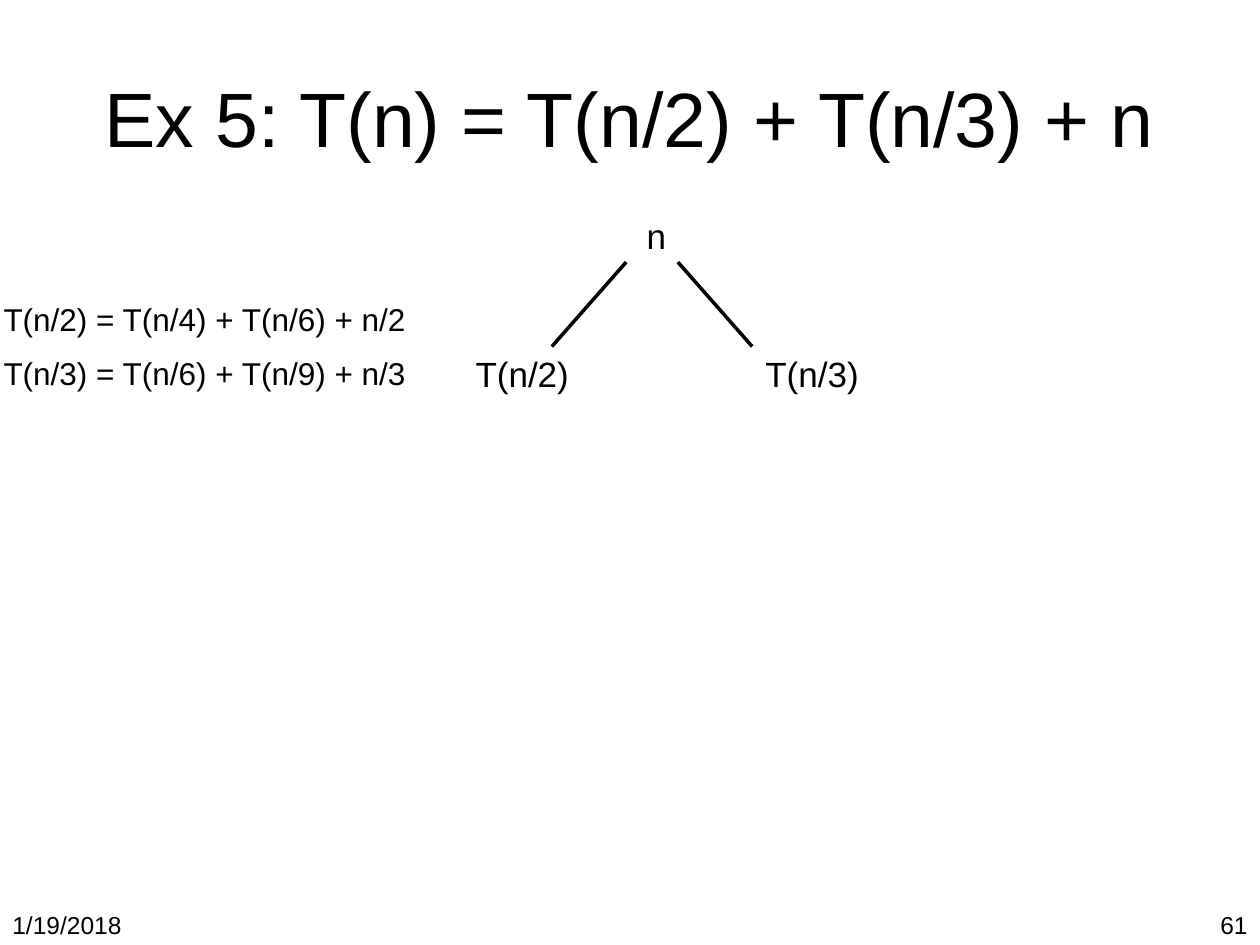
from dataclasses import dataclass

from lxml import etree
from pptx import Presentation
from pptx.dml.color import RGBColor
from pptx.enum.shapes import MSO_CONNECTOR
from pptx.enum.text import MSO_ANCHOR, MSO_AUTO_SIZE, PP_ALIGN
from pptx.oxml.ns import qn
from pptx.slide import Slide
from pptx.text.text import TextFrame
from pptx.util import Inches, Pt

LEFT, CENTER, RIGHT = PP_ALIGN.LEFT, PP_ALIGN.CENTER, PP_ALIGN.RIGHT
MIDDLE = MSO_ANCHOR.MIDDLE
FIT_SHAPE = MSO_AUTO_SIZE.SHAPE_TO_FIT_TEXT
STRAIGHT = MSO_CONNECTOR.STRAIGHT

BLACK = RGBColor(0, 0, 0)
WHITE = RGBColor(255, 255, 255)
FONT = "Arial"


@dataclass
class Label:
    text: str
    left: float
    top: float
    width: float
    height: float
    size: int
    align: PP_ALIGN = CENTER
    wrap: bool = False


@dataclass
class Branch:
    start_x: float
    end_x: float
    start_y: float = 2.08
    end_y: float = 2.75


FOOTERS = [
    Label("1/19/2018", 0, 7.17, 2.33, 0.33, 14, LEFT, True),
    Label("61", 7.67, 7.17, 2.33, 0.33, 14, RIGHT, True),
]
TREE_NODES = [
    Label("n", 5.03, 1.65, 0.36, 0.44, 20),
    Label("T(n/2)", 3.67, 2.75, 0.95, 0.44, 20),
    Label("T(n/3)", 5.97, 2.75, 0.95, 0.44, 20),
]
EXPANSIONS = [
    Label("T(n/2) = T(n/4) + T(n/6) + n/2", -0.09, 2.33, 3.43, 0.4, 18),
    Label("T(n/3) = T(n/6) + T(n/9) + n/3", -0.09, 2.76, 3.43, 0.4, 18),
]
BRANCHES = [Branch(4.97, 4.38), Branch(5.38, 5.97)]


def write(frame: TextFrame, text: str, size: int, align: PP_ALIGN) -> None:
    frame.text = text
    para = frame.paragraphs[0]
    para.alignment = align
    font = para.runs[0].font
    font.name, font.size = FONT, Pt(size)
    font.color.rgb = BLACK


def add_title(page: Slide, text: str) -> None:
    title = page.shapes.title
    title.left, title.top = Inches(0.5), Inches(0.3)
    title.width, title.height = Inches(9), Inches(1.25)
    title.text_frame.vertical_anchor = MIDDLE
    write(title.text_frame, text, 44, CENTER)


def add_label(page: Slide, label: Label) -> None:
    box = page.shapes.add_textbox(
        Inches(label.left), Inches(label.top),
        Inches(label.width), Inches(label.height))
    frame = box.text_frame
    frame.word_wrap = label.wrap
    if not label.wrap:
        frame.auto_size = FIT_SHAPE
    write(frame, label.text, label.size, label.align)


def add_branch(page: Slide, branch: Branch) -> None:
    line = page.shapes.add_connector(
        STRAIGHT,
        Inches(branch.start_x), Inches(branch.start_y),
        Inches(branch.end_x), Inches(branch.end_y))
    line.line.color.rgb = BLACK
    line.line.width = Pt(2)
    etree.SubElement(line._element.spPr, qn("a:effectLst"))


def main() -> None:
    deck = Presentation()
    deck.slide_width, deck.slide_height = Inches(10), Inches(7.5)
    page = deck.slides.add_slide(deck.slide_layouts.get_by_name("Title Only"))
    page.background.fill.solid()
    page.background.fill.fore_color.rgb = WHITE

    add_title(page, "Ex 5: T(n) = T(n/2) + T(n/3) + n")
    for label in FOOTERS + TREE_NODES + EXPANSIONS:
        add_label(page, label)
    for branch in BRANCHES:
        add_branch(page, branch)
    deck.save("out.pptx")


if __name__ == "__main__":
    main()
